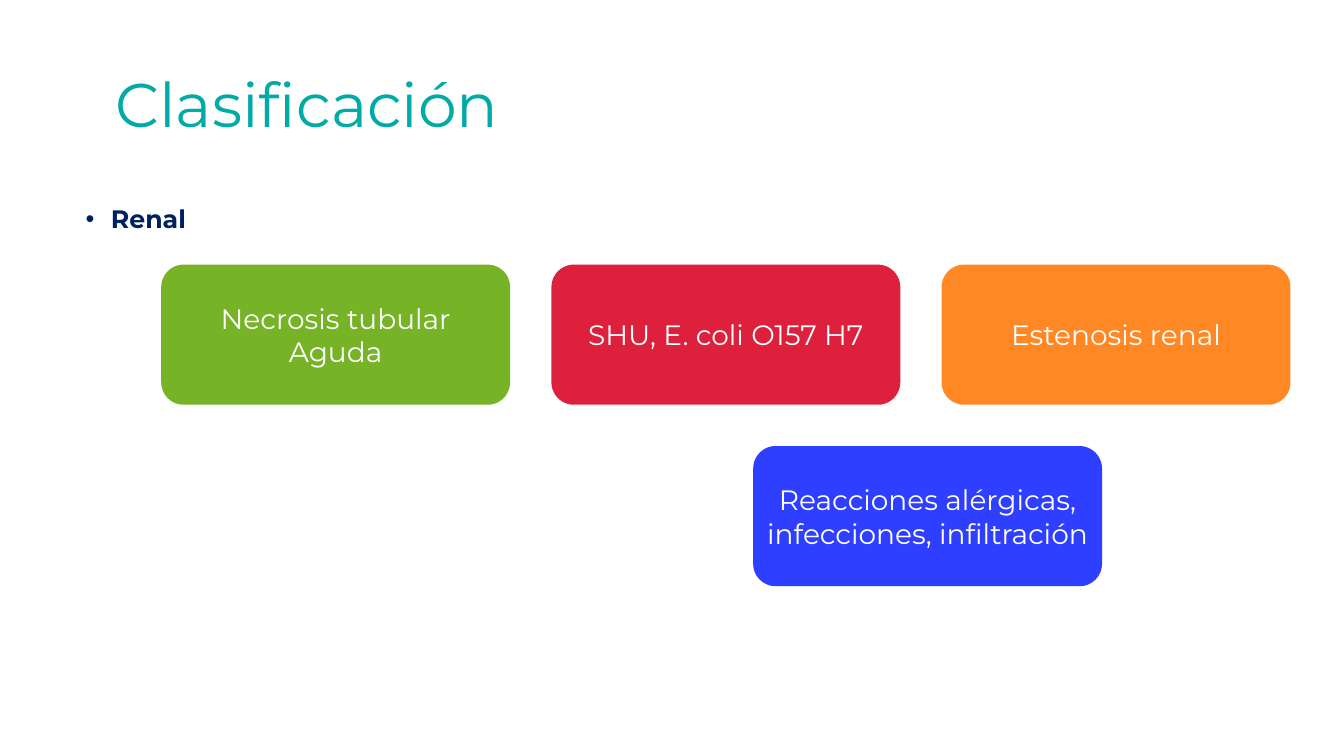
from lxml import etree
from pptx import Presentation
from pptx.dml.color import RGBColor
from pptx.enum.shapes import MSO_SHAPE
from pptx.enum.text import MSO_ANCHOR, MSO_AUTO_SIZE, PP_ALIGN
from pptx.oxml.ns import qn
from pptx.util import Inches, Pt

ROUND = MSO_SHAPE.ROUNDED_RECTANGLE
MIDDLE, TOP = MSO_ANCHOR.MIDDLE, MSO_ANCHOR.TOP
CENTER, LEFT = PP_ALIGN.CENTER, PP_ALIGN.LEFT
FIXED = MSO_AUTO_SIZE.NONE

FONT = "Montserrat"
COLORS = {
    "title": "00AAA7",
    "body": "002060",
    "white": "FFFFFF",
    "green": "76B327",
    "red": "DD213D",
    "orange": "FF8825",
    "blue": "2F3FFF",
}
WIDE, HIGH = 13.33, 7.5
CARD_W, CARD_H, GAP = 3.46, 1.39, 0.41
CARDS = [
    (0, 0, "green", "Necrosis tubular Aguda"),
    (1, 0, "red", "SHU, E. coli O157 H7"),
    (2, 0, "orange", "Estenosis renal"),
    (1.517, 1, "blue", "Reacciones alérgicas, infecciones, infiltración"),
]


def place(shape, box):
    """Move a shape to a box given in inches."""
    shape.left, shape.top, shape.width, shape.height = map(Inches, box)


def write(shape, text, size=20, color="white", bold=False, align=CENTER,
          anchor=MIDDLE, space=1.0, inset=None, bullet=None):
    """Fill a shape with one formatted paragraph."""
    frame = shape.text_frame
    frame.text = text
    frame.word_wrap = True
    frame.auto_size = FIXED
    frame.vertical_anchor = anchor
    if inset is not None:
        frame.margin_left = frame.margin_right = Inches(inset)
        frame.margin_top = frame.margin_bottom = Inches(inset)
    para = frame.paragraphs[0]
    if bullet:
        props = para._p.get_or_add_pPr()
        props.set("marL", str(Inches(0.25)))
        props.set("indent", str(Inches(-0.25)))
        etree.SubElement(props, qn("a:buFont")).set("typeface", "Arial")
        etree.SubElement(props, qn("a:buChar")).set("char", bullet)
    para.alignment = align
    para.line_spacing = space
    para.space_before = Pt(0)
    font = para.runs[0].font
    font.name, font.size, font.bold = FONT, Pt(size), bold
    font.color.rgb = RGBColor.from_string(COLORS[color])


def head(slide, box):
    """Set the slide title in its box."""
    place(slide.shapes.title, box)
    write(slide.shapes.title, "Clasificación", size=44, color="title", space=0.9)


def body(slide, box):
    """Set the bulleted list in its box."""
    holder = slide.placeholders[1]
    place(holder, box)
    write(holder, "Renal", size=18, color="body", bold=True, align=LEFT,
          anchor=TOP, space=0.9, bullet="•")


def cards(slide, left, top):
    """Lay out the cause cards on a grid from its top left corner."""
    for col, row, fill, text in CARDS:
        x = left + col * (CARD_W + GAP)
        y = top + row * (CARD_H + GAP)
        card = slide.shapes.add_shape(
            ROUND, *map(Inches, (x, y, CARD_W, CARD_H)))
        card.adjustments[0] = 0.16
        card.shadow.inherit = False
        card.fill.solid()
        card.fill.fore_color.rgb = RGBColor.from_string(COLORS[fill])
        card.line.fill.background()
        write(card, text, inset=0.06)


def main():
    """Build and save the slide."""
    deck = Presentation()
    deck.slide_width, deck.slide_height = Inches(WIDE), Inches(HIGH)
    slide = deck.slides.add_slide(deck.slide_layouts[1])
    body(slide, (0.75, 2, 12.05, 2.6))
    cards(slide, 0.12 * WIDE, 0.35 * HIGH)
    head(slide, (0.9, 0.34, 4.29, 1.45))
    deck.save("out.pptx")


if __name__ == "__main__":
    main()
